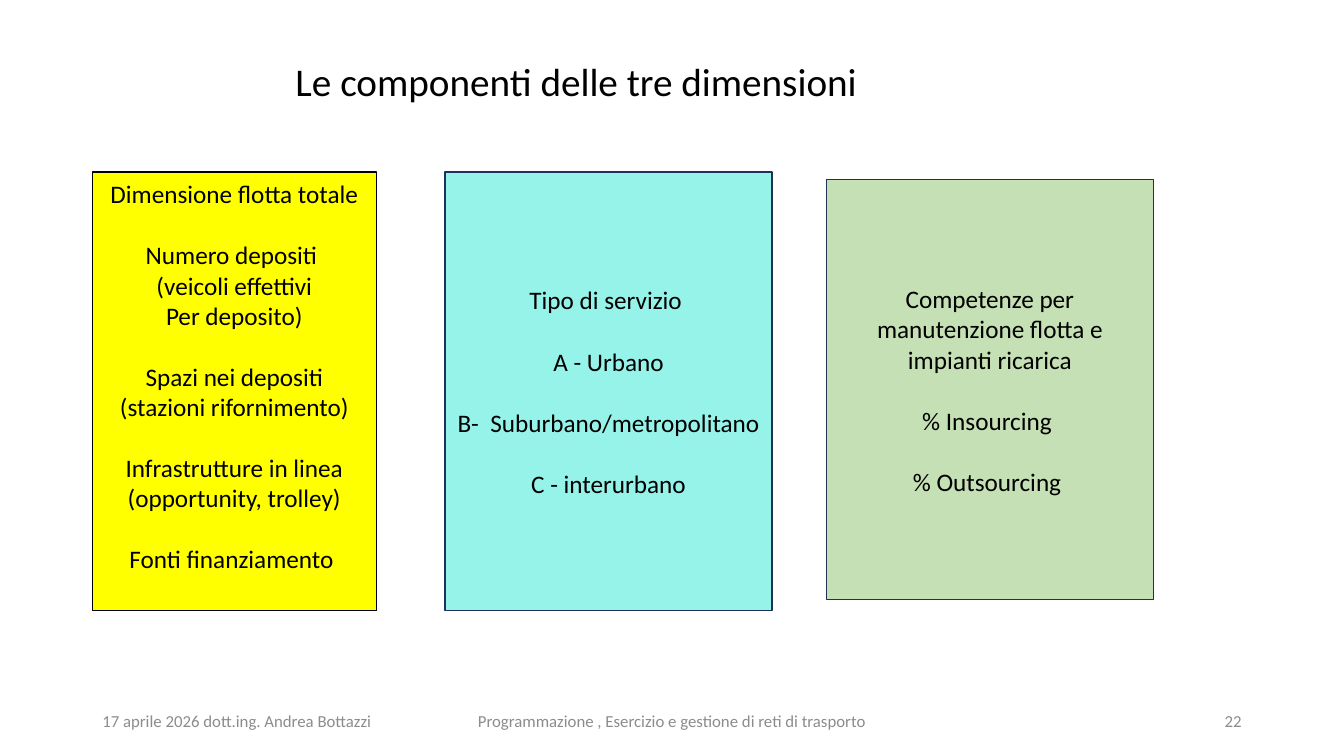
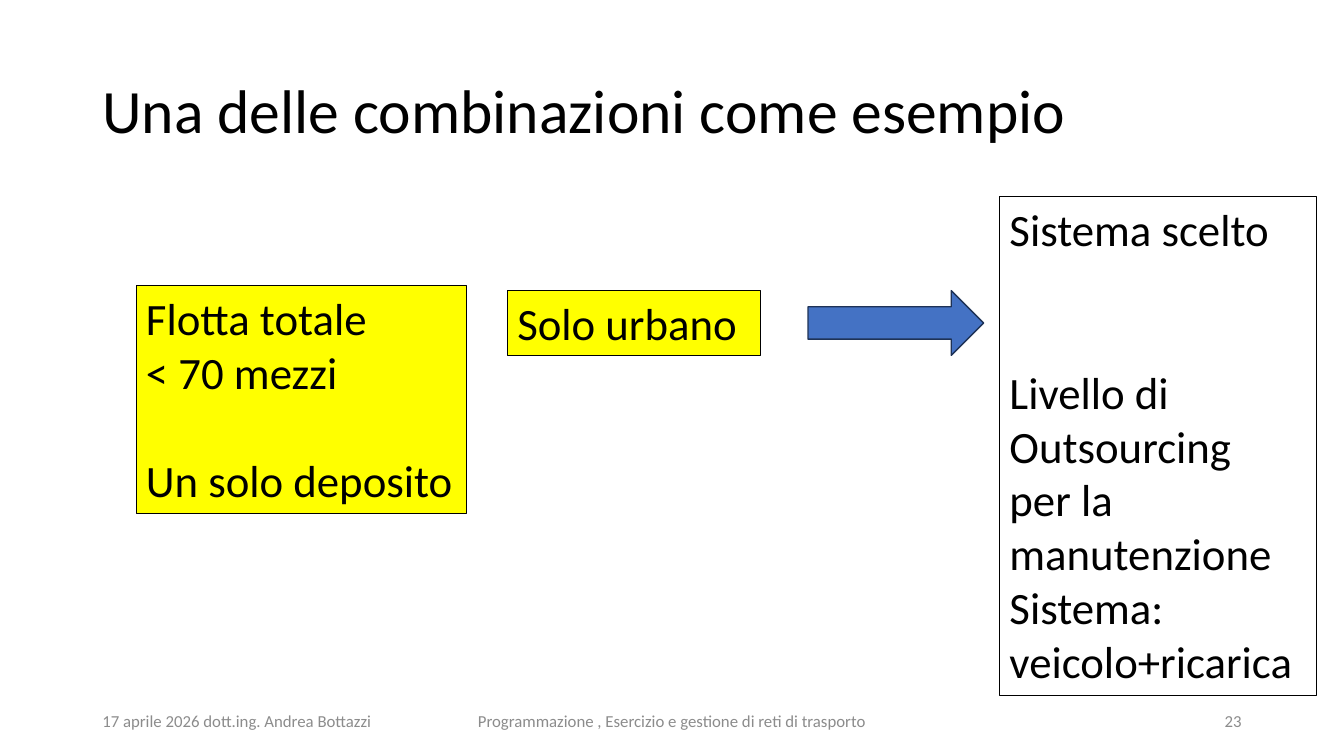
"""Build two slides on the dimensions of a bus fleet and one example combination."""

from dataclasses import dataclass
from typing import Optional

from pptx import Presentation
from pptx.dml.color import RGBColor
from pptx.enum.shapes import MSO_SHAPE
from pptx.enum.text import MSO_ANCHOR, PP_ALIGN
from pptx.util import Inches, Pt

SLIDE_WIDTH, SLIDE_HEIGHT = Inches(40 / 3), Inches(7.5)
COLUMNS, ROWS = 160, 90
FONT = "Calibri"
LINE_HEIGHT = 1.22
BLACK, GREY, NAVY = "000000", "8C8C8C", "1E3256"
YELLOW, AQUA, GREEN, BLUE = "FFFF00", "95F3EA", "C5E0B4", "4472C4"
LEFT, CENTER, RIGHT = PP_ALIGN.LEFT, PP_ALIGN.CENTER, PP_ALIGN.RIGHT
TOP, MIDDLE = MSO_ANCHOR.TOP, MSO_ANCHOR.MIDDLE


@dataclass(frozen=True)
class Area:
    """A rectangle in columns and rows of the slide grid."""

    column: float
    row: float
    width: float
    height: float


@dataclass(frozen=True)
class TextStyle:
    """Size, colour and placing of the text in a box."""

    size: float
    color: str = BLACK
    align: PP_ALIGN = LEFT
    anchor: MSO_ANCHOR = TOP
    line_spacing: Optional[float] = None


@dataclass(frozen=True)
class Box:
    """A box whose groups of lines are set apart by empty space."""

    area: Area
    groups: tuple[tuple[str, ...], ...]
    style: TextStyle
    fill: Optional[str] = None
    line: Optional[str] = None
    line_width: float = 1
    gap_lines: int = 1
    bottom_inset: float = 0.05
    preset: MSO_SHAPE = MSO_SHAPE.RECTANGLE


FOOTER_ROW, FOOTER_HEIGHT = 83.4, 4.8
MARGIN = 11
CARD = TextStyle(18, align=CENTER, anchor=MIDDLE)
LARGE = TextStyle(32)
SMALL_TITLE = TextStyle(28)
TITLE = TextStyle(44, anchor=MIDDLE, line_spacing=0.9)

COMPONENTS = (
    Box(Area(34, 6.2, 72, 6.8), (("Le componenti delle tre dimensioni",),), SMALL_TITLE),
    Box(
        Area(MARGIN, 20.5, 33.8, 52.2),
        (
            ("Dimensione flotta totale",),
            ("Numero depositi ", "(veicoli effettivi", "Per deposito)"),
            ("Spazi nei depositi", "(stazioni rifornimento)"),
            ("Infrastrutture in linea", "(opportunity, trolley)"),
            ("Fonti finanziamento ",),
        ),
        CARD, YELLOW, BLACK, bottom_inset=0.35,
    ),
    Box(
        Area(53, 20.5, 38.9, 52.2),
        (("Tipo di servizio ",), ("A - Urbano",),
         ("B-  Suburbano/metropolitano",), ("C - interurbano",)),
        CARD, AQUA, NAVY,
    ),
    Box(
        Area(98.4, 21.4, 38.9, 50),
        (("Competenze per manutenzione flotta e impianti ricarica",),
         ("% Insourcing ",), ("% Outsourcing ",)),
        CARD, GREEN, NAVY,
    ),
)

EXAMPLE = (
    Box(Area(MARGIN, 4.8, 138, 17.4), (("Una delle combinazioni come esempio",),), TITLE),
    Box(
        Area(16.2, 34, 39.4, 27.1),
        (("Flotta totale", "< 70 mezzi"), ("Un solo deposito",)),
        LARGE, YELLOW, BLACK, 0.75,
    ),
    Box(Area(60.4, 34.6, 30.1, 7.7), (("Solo urbano",),), LARGE, YELLOW, BLACK, 0.75),
    Box(Area(96.2, 34.6, 20.9, 7.7), (), LARGE, BLUE, NAVY,
        preset=MSO_SHAPE.RIGHT_ARROW),
    Box(
        Area(119, 23.4, 37.7, 59.4),
        (("Sistema scelto",),
         ("Livello di", "Outsourcing", "per la manutenzione", "Sistema: veicolo+ricarica")),
        LARGE, None, BLACK, 0.75, gap_lines=2,
    ),
)


def rgb(color: str) -> RGBColor:
    """Turn a hex string into a colour."""
    return RGBColor.from_string(color)


def place(area: Area) -> tuple[int, int, int, int]:
    """Turn a grid area into left, top, width and height."""
    column, row = SLIDE_WIDTH / COLUMNS, SLIDE_HEIGHT / ROWS
    return (round(area.column * column), round(area.row * row),
            round(area.width * column), round(area.height * row))


def write_text(frame, box: Box) -> None:
    """Write the groups of a box, with space before each group but the first."""
    style = box.style
    frame.word_wrap = True
    frame.vertical_anchor = style.anchor
    frame.margin_bottom = Inches(box.bottom_inset)
    lines = [(group_index > 0 and line_index == 0, text)
             for group_index, group in enumerate(box.groups)
             for line_index, text in enumerate(group)]
    for index, (starts_group, text) in enumerate(lines):
        paragraph = frame.add_paragraph() if index else frame.paragraphs[0]
        paragraph.text = text
        paragraph.alignment = style.align
        paragraph.font.name = FONT
        paragraph.font.size = Pt(style.size)
        paragraph.font.color.rgb = rgb(style.color)
        if style.line_spacing:
            paragraph.line_spacing = style.line_spacing
        if starts_group:
            paragraph.space_before = Pt(round(box.gap_lines * style.size * LINE_HEIGHT))


def draw_box(slide, box: Box) -> None:
    """Draw a text box, or a preset shape where the box has an outline."""
    if box.line is None:
        shape = slide.shapes.add_textbox(*place(box.area))
    else:
        shape = slide.shapes.add_shape(box.preset, *place(box.area))
        shape.shadow.inherit = False
        shape.line.color.rgb = rgb(box.line)
        shape.line.width = Pt(box.line_width)
        if box.fill is None:
            shape.fill.background()
        else:
            shape.fill.solid()
            shape.fill.fore_color.rgb = rgb(box.fill)
    if box.groups:
        write_text(shape.text_frame, box)


def draw_footer(slide, number: int) -> None:
    """Draw the date and author, the course name and the slide number."""
    for column, width, text, align in (
        (MARGIN, 36, "17 aprile 2026 dott.ing. Andrea Bottazzi", LEFT),
        (53, 54, "Programmazione , Esercizio e gestione di reti di trasporto", CENTER),
        (113, 36, str(number), RIGHT),
    ):
        area = Area(column, FOOTER_ROW, width, FOOTER_HEIGHT)
        draw_box(slide, Box(area, ((text,),), TextStyle(12, GREY, align, MIDDLE)))


def main() -> None:
    """Build and save the presentation."""
    presentation = Presentation()
    presentation.slide_width, presentation.slide_height = SLIDE_WIDTH, SLIDE_HEIGHT
    for number, boxes in enumerate((COMPONENTS, EXAMPLE), start=22):
        slide = presentation.slides.add_slide(presentation.slide_layouts[6])
        draw_footer(slide, number)
        for box in boxes:
            draw_box(slide, box)
    presentation.save("out.pptx")


if __name__ == "__main__":
    main()
